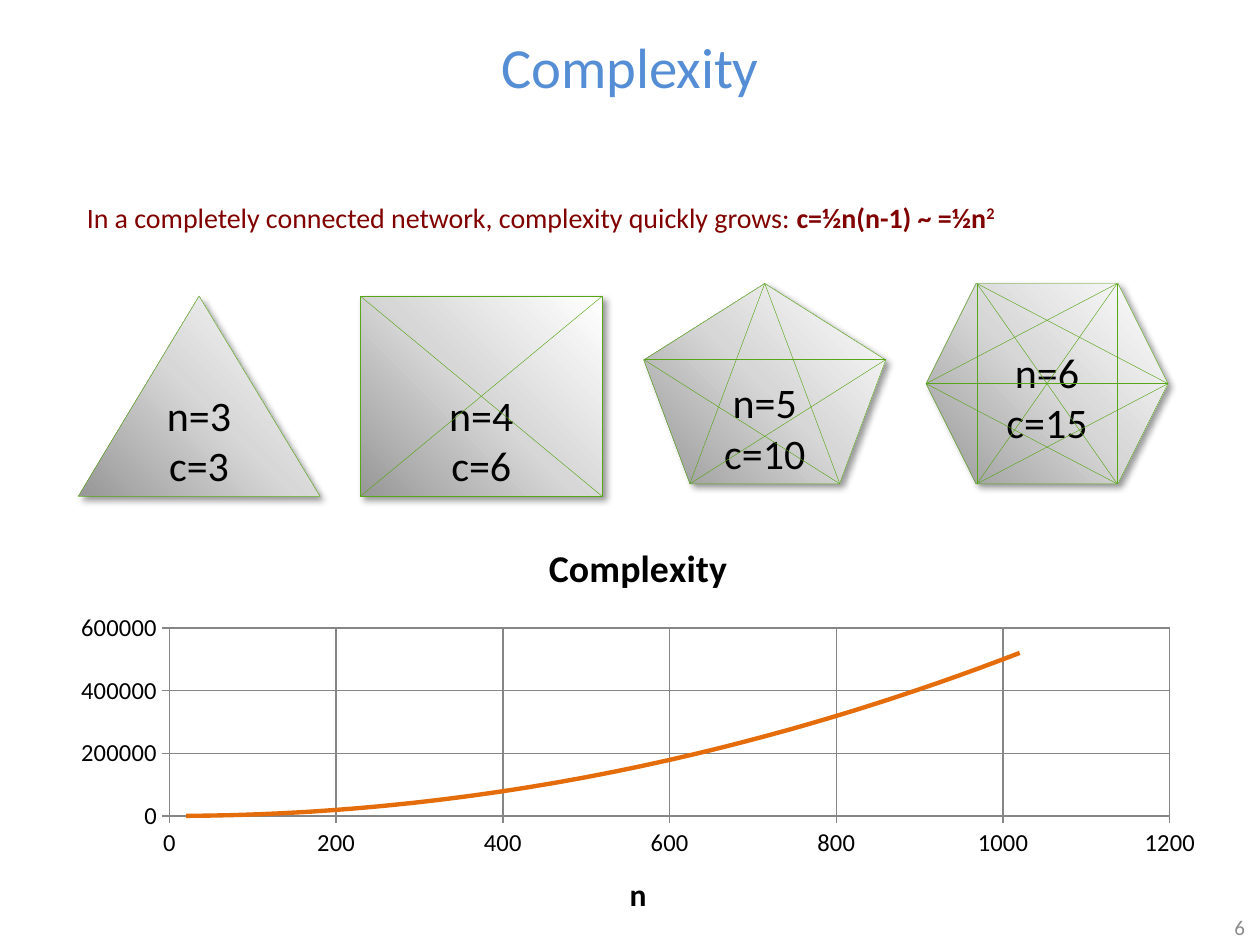
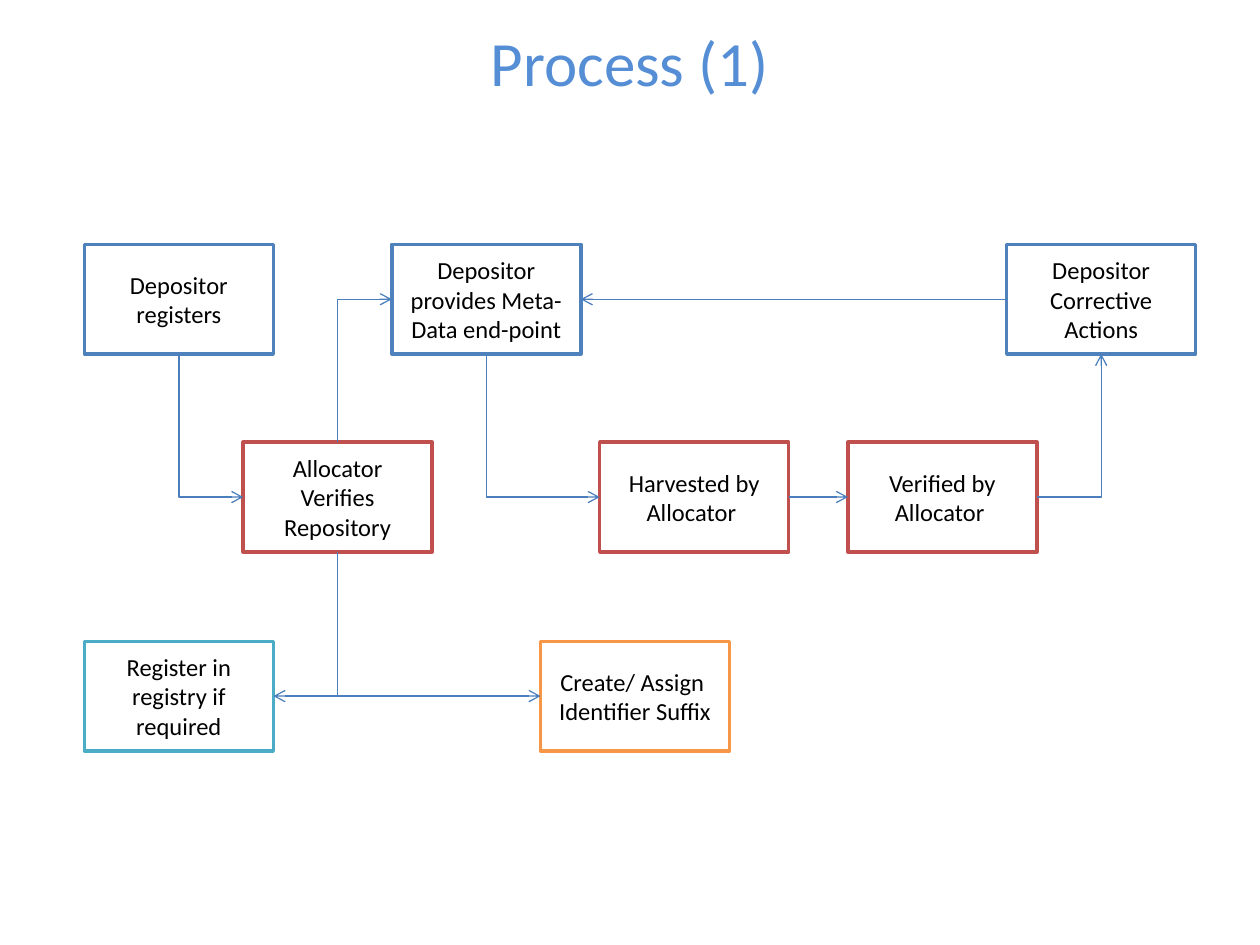
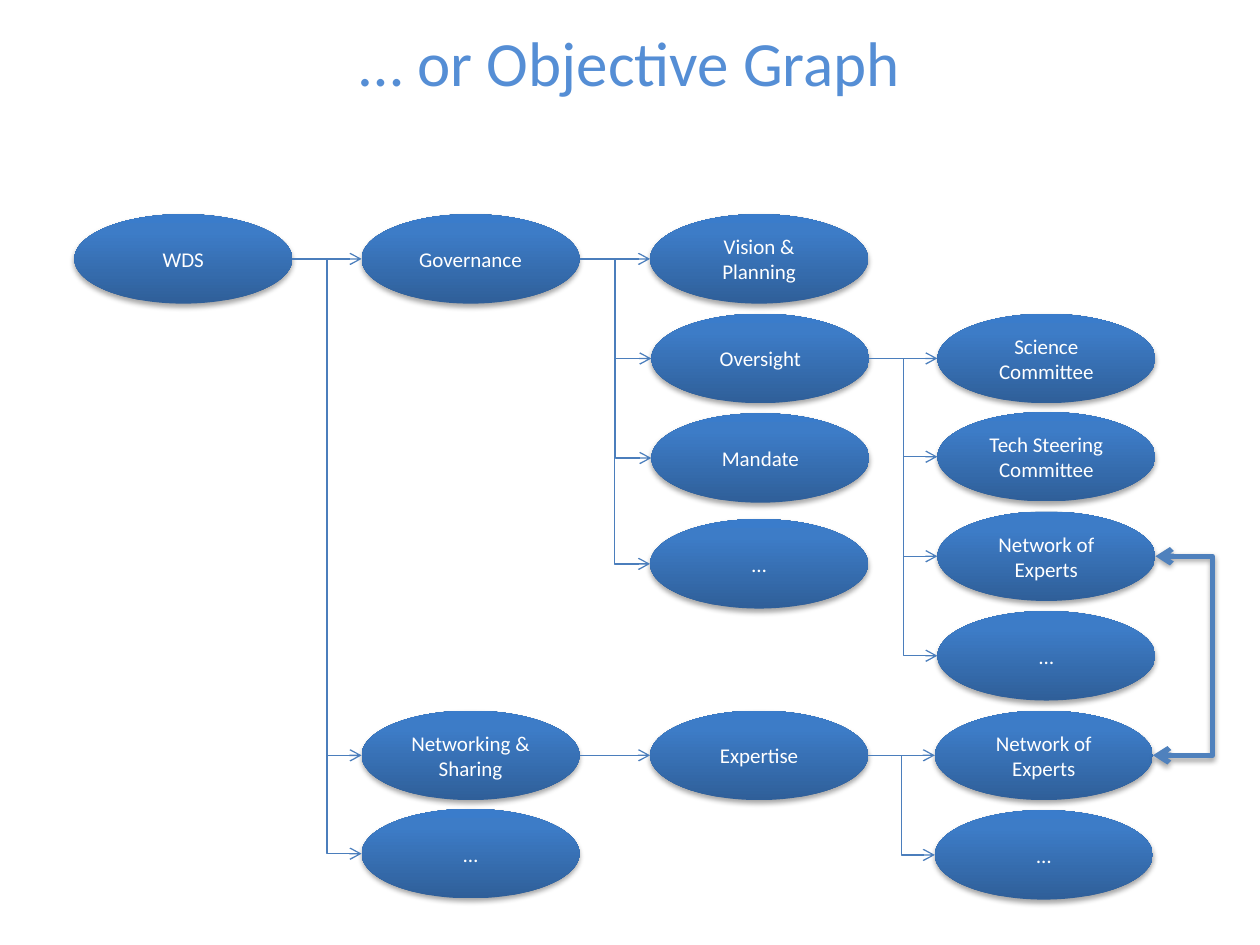
from dataclasses import dataclass
from itertools import combinations

from lxml.etree import SubElement
from pptx import Presentation
from pptx.chart.data import XyChartData
from pptx.dml.color import RGBColor
from pptx.enum.chart import XL_CHART_TYPE as ChartType, XL_MARKER_STYLE as Marker
from pptx.enum.chart import XL_TICK_MARK as Tick
from pptx.enum.shapes import MSO_CONNECTOR as Line, MSO_SHAPE as Shape
from pptx.enum.text import MSO_ANCHOR as Anchor, PP_ALIGN as Align
from pptx.oxml import parse_xml
from pptx.oxml.ns import nsdecls, qn
from pptx.util import Inches, Pt


@dataclass(frozen=True)
class Theme:
    font: str = "Calibri"
    black: str = "000000"
    white: str = "FFFFFF"
    title: str = "558ED5"
    number: str = "8C8C8C"
    claim: str = "800000"
    network: str = "58A618"
    arrow: str = "4B7EBC"
    blue: str = "4F81BD"
    red: str = "C0504D"
    orange: str = "F79646"
    teal: str = "4BACC6"
    trend: str = "E46C0A"
    grid: str = "868686"
    # Gradient: stops in percent, then the angle in degrees
    silver: tuple = (((0, "979797"), (50, "D7D7D7"), (100, "FFFFFF")), 315)
    ocean: tuple = (((0, "2F5F99"), (80, "3D7CC7"), (100, "3A7CCB")), 270)
    # Shadow: opacity in percent, blur and distance in points, angle in degrees
    deep_shadow: tuple = (40, 4, 3, 45)
    soft_shadow: tuple = (35, 3.1, 1.8, 90)
    title_size: float = 36
    small_title_size: float = 32.4
    polygon_size: float = 24
    chart_title_size: float = 21.6
    axis_title_size: float = 18
    claim_size: float = 16
    body_size: float = 14
    small_size: float = 12
    hairline: float = 0.25


theme = Theme()


def write(box, text, size, color=theme.black, align=Align.CENTER, anchor=Anchor.MIDDLE,
          wrap=True, bold=False):
    """Fill a shape with text, one paragraph for each line."""
    frame = box.text_frame
    frame.word_wrap = wrap
    frame.vertical_anchor = anchor
    for index, line in enumerate(text.split("\n")):
        para = frame.paragraphs[0] if index == 0 else frame.add_paragraph()
        para.alignment = align
        span = para.add_run()
        span.text = line
        span.font.name, span.font.size, span.font.bold = theme.font, Pt(size), bold
        span.font.color.rgb = RGBColor.from_string(color)


def link(page, start, end, kind=Line.ELBOW, color=theme.arrow, width=0.75,
         head=False, tail=True):
    """Draw a connector between two points given in inches."""
    line = page.shapes.add_connector(kind, *map(Inches, (*start, *end)))
    line.line.color.rgb = RGBColor.from_string(color)
    line.line.width = Pt(width)
    for tag, wanted in (("a:headEnd", head), ("a:tailEnd", tail)):
        if wanted:
            SubElement(line.line._ln, qn(tag), type="arrow")
    SubElement(line._element.spPr, qn("a:effectLst"))
    return line


deck = Presentation()
deck.slide_width, deck.slide_height = Inches(10), Inches(7.5)
dressed = []  # objects that get a gradient and a shadow at the end

# Pages with their titles
pages = []
for text, top, height, size in (
    ("Complexity", 0.29, 0.47, theme.small_title_size),
    ("Process (1)", -0.01, 1, theme.title_size),
    ("… or Objective Graph", -0.01, 1, theme.title_size),
):
    page = deck.slides.add_slide(deck.slide_layouts[6])
    box = page.shapes.add_textbox(0, Inches(top), Inches(10), Inches(height))
    write(box, text, size, color=theme.title)
    pages.append(page)
complexity, process, graph = pages

# Complexity: page number
box = complexity.shapes.add_textbox(Inches(9.56), Inches(7.23), Inches(0.42), Inches(0.25))
write(box, "6", theme.small_size, color=theme.number, align=Align.RIGHT)

# Complexity: polygons, with corners as fractions of their boxes
POLYGON_WIDTH, POLYGON_HEIGHT = 1.92, 1.59
polygons = (
    (Shape.ISOSCELES_TRIANGLE, 0.62, 2.35, "n=3\nc=3", ((0.5, 0), (1, 1), (0, 1))),
    (Shape.HEXAGON, 7.35, 2.25, "n=6\nc=15",
     ((0.21, 0), (0.79, 0), (1, 0.5), (0.79, 1), (0.21, 1), (0, 0.5))),
    (Shape.REGULAR_PENTAGON, 5.11, 2.25, "n=5\nc=10",
     ((0.5, 0), (1, 0.38), (0.81, 1), (0.19, 1), (0, 0.38))),
    (Shape.RECTANGLE, 2.86, 2.35, "n=4\nc=6", ((0, 0), (1, 0), (1, 1), (0, 1))),
)
for kind, left, top, text, corners in polygons:
    polygon = complexity.shapes.add_shape(
        kind, *map(Inches, (left, top, POLYGON_WIDTH, POLYGON_HEIGHT)))
    polygon.line.color.rgb = RGBColor.from_string(theme.network)
    polygon.line.width = Pt(theme.hairline)
    write(polygon, text, theme.polygon_size, anchor=Anchor.BOTTOM)
    dressed.append((polygon, theme.silver, theme.deep_shadow))

# Complexity: diagonals join every two corners that are not neighbours
for kind, left, top, text, corners in polygons:
    points = [(left + x * POLYGON_WIDTH, top + y * POLYGON_HEIGHT) for x, y in corners]
    for first, second in combinations(range(len(points)), 2):
        if second - first not in (1, len(points) - 1):
            link(complexity, points[first], points[second], kind=Line.STRAIGHT,
                 color=theme.network, width=theme.hairline, tail=False)

# Complexity: formula
box = complexity.shapes.add_textbox(Inches(0.59), Inches(1.54), Inches(8.85), Inches(0.37))
write(box, "In a completely connected network, complexity quickly grows: ",
      theme.claim_size, color=theme.claim, align=Align.LEFT, anchor=Anchor.TOP, wrap=False)
for text, raised in (("c=½n(n-1) ~ =½n", False), ("2", True)):
    span = box.text_frame.paragraphs[0].add_run()
    span.text = text
    span.font.name, span.font.size, span.font.bold = theme.font, Pt(theme.claim_size), True
    span.font.color.rgb = RGBColor.from_string(theme.claim)
    if raised:
        span.font._element.set("baseline", "30000")

# Complexity: chart
chart_data = XyChartData()
series_data = chart_data.add_series("Complexity")
nodes_and_links = [(0, 0)] * 5 + [
    (10, 0), (10, 0), (20, 0), (30, 0), (60, 0),
    (130, 10000), (260, 30000), (510, 130000), (1020, 520000)]
for node_count, link_count in nodes_and_links:
    series_data.add_data_point(node_count, link_count)
chart = complexity.shapes.add_chart(
    ChartType.XY_SCATTER, *map(Inches, (0.46, 4.12, 9.21, 3.38)), chart_data).chart
chart.has_legend = False
chart.font.name, chart.font.size = theme.font, Pt(theme.body_size)
chart.font.color.rgb = RGBColor.from_string(theme.black)
chart.has_title = True
write(chart.chart_title, "Complexity", theme.chart_title_size, bold=True)
chart.category_axis.has_title = True
write(chart.category_axis.axis_title, "n", theme.axis_title_size, bold=True)
for axis, maximum, step in ((chart.category_axis, 1200, 200),
                            (chart.value_axis, 600000, 200000)):
    axis.minimum_scale, axis.maximum_scale, axis.major_unit = 0, maximum, step
    axis.major_tick_mark, axis.minor_tick_mark = Tick.OUTSIDE, Tick.NONE
    axis.has_major_gridlines = True
    axis.tick_labels.font.size = Pt(theme.body_size)
    axis.tick_labels.number_format = "General"
    axis.tick_labels.number_format_is_linked = False
    for stroke in (axis.format.line, axis.major_gridlines.format.line):
        stroke.color.rgb = RGBColor.from_string(theme.grid)
        stroke.width = Pt(0.75)

# Complexity: the curve is a quadratic trend line, the points stay unseen
series = chart.plots[0].series[0]
series.format.line.fill.background()
series.marker.style = Marker.NONE
series.smooth = False
series._element.find(qn("c:xVal")).addprevious(parse_xml(
    f'<c:trendline {nsdecls("c", "a")}><c:spPr><a:ln w="{Pt(2.5)}"><a:solidFill>'
    f'<a:srgbClr val="{theme.trend}"/></a:solidFill></a:ln></c:spPr>'
    '<c:trendlineType val="poly"/><c:order val="2"/>'
    '<c:dispRSqr val="0"/><c:dispEq val="0"/></c:trendline>'))

# Process: steps
STEP_WIDTH, STEP_HEIGHT = 1.5, 0.87
TOP_ROW, MIDDLE_ROW, BOTTOM_ROW = 1.94, 3.51, 5.09
steps = {
    "provide": ("Depositor provides Meta-Data end-point", 3.11, TOP_ROW, theme.blue),
    "register": ("Depositor registers", 0.67, TOP_ROW, theme.blue),
    "harvest": ("Harvested by\nAllocator ", 4.76, MIDDLE_ROW, theme.red),
    "check": ("Allocator Verifies Repository", 1.93, MIDDLE_ROW, theme.red),
    "verify": ("Verified by\nAllocator ", 6.73, MIDDLE_ROW, theme.red),
    "correct": ("Depositor Corrective Actions", 7.99, TOP_ROW, theme.blue),
    "suffix": ("Create/ Assign \nIdentifier Suffix", 4.29, BOTTOM_ROW, theme.orange),
    "catalogue": ("Register in registry if required", 0.67, BOTTOM_ROW, theme.teal),
}
sides = {}
for name, (text, left, top, color) in steps.items():
    box = process.shapes.add_shape(
        Shape.RECTANGLE, *map(Inches, (left, top, STEP_WIDTH, STEP_HEIGHT)))
    box.shadow.inherit = False
    box.fill.solid()
    box.fill.fore_color.rgb = RGBColor.from_string(theme.white)
    box.line.color.rgb = RGBColor.from_string(color)
    box.line.width = Pt(2)
    write(box, text, theme.body_size)
    center, middle = left + STEP_WIDTH / 2, top + STEP_HEIGHT / 2
    sides[name] = {"top": (center, top), "left": (left, middle),
                   "bottom": (center, top + STEP_HEIGHT),
                   "right": (left + STEP_WIDTH, middle)}

# Process: arrows, turning once where they leave or enter a top or bottom side
for source, source_side, target, target_side in (
    ("register", "bottom", "check", "left"),
    ("check", "top", "provide", "left"),
    ("verify", "right", "correct", "bottom"),
    ("correct", "left", "provide", "right"),
    ("provide", "bottom", "harvest", "left"),
    ("harvest", "right", "verify", "left"),
    ("check", "bottom", "suffix", "left"),
    ("check", "bottom", "catalogue", "right"),
):
    start, end = sides[source][source_side], sides[target][target_side]
    arrow = link(process, start, end)
    leaves_upright = source_side in ("top", "bottom")
    if leaves_upright or target_side in ("top", "bottom"):
        arrow._element.spPr.find(qn("a:prstGeom")).set("prst", "bentConnector2")
    if leaves_upright:
        # A vertical first leg needs a quarter turn about the centre
        run, rise = abs(end[0] - start[0]), abs(end[1] - start[1])
        arrow.left = Inches((start[0] + end[0] - rise) / 2)
        arrow.top = Inches((start[1] + end[1] - run) / 2)
        arrow.width, arrow.height = Inches(rise), Inches(run)
        rightward, upward = end[0] > start[0], end[1] < start[1]
        xfrm = arrow._element.spPr.find(qn("a:xfrm"))
        xfrm.set("rot", str((270 if rightward and not upward else 90) * 60000))
        xfrm.set("flipH", str(int(rightward)))
        xfrm.set("flipV", str(int(upward)))

# Objective graph: nodes
NODE_WIDTH, NODE_HEIGHT = 1.73, 0.71
nodes = {
    "wds": ("WDS", 0.59, 1.7),
    "governance": ("Governance", 2.87, 1.7),
    "vision": ("Vision &\nPlanning", 5.16, 1.7),
    "networking": ("Networking & Sharing", 2.87, 5.64),
    "expertise": ("Expertise", 5.16, 5.64),
    "oversight": ("Oversight", 5.17, 2.49),
    "mandate": ("Mandate", 5.17, 3.28),
    "more governance": ("…", 5.16, 4.12),
    "science": ("Science Committee", 7.44, 2.49),
    "steering": ("Tech Steering\nCommittee", 7.44, 3.27),
    "overseen experts": ("Network of Experts", 7.44, 4.06),
    "more oversight": ("…", 7.44, 4.85),
    "more goals": ("…", 2.87, 6.42),
    "experts": ("Network of Experts", 7.42, 5.64),
    "more expertise": ("…", 7.42, 6.43),
}
entries, exits = {}, {}
for name, (text, left, top) in nodes.items():
    oval = graph.shapes.add_shape(
        Shape.OVAL, *map(Inches, (left, top, NODE_WIDTH, NODE_HEIGHT)))
    oval.line.fill.background()
    write(oval, text, theme.small_size, color=theme.white)
    dressed.append((oval, theme.ocean, theme.soft_shadow))
    entries[name] = (left, top + NODE_HEIGHT / 2)
    exits[name] = (left + NODE_WIDTH, top + NODE_HEIGHT / 2)

# Objective graph: arrows from parent to children
children = {
    "wds": ("governance", "networking", "more goals"),
    "governance": ("vision", "oversight", "mandate", "more governance"),
    "oversight": ("science", "steering", "overseen experts", "more oversight"),
    "networking": ("expertise",),
    "expertise": ("experts", "more expertise"),
}
for parent, names in children.items():
    for name in names:
        link(graph, exits[parent], entries[name])

# Objective graph: thick link between the two expert networks, bending out to the right
bridge = link(graph, exits["experts"], exits["overseen experts"],
              color=theme.blue, width=3, head=True)
SubElement(bridge._element.spPr.find(qn("a:prstGeom")).find(qn("a:avLst")),
           qn("a:gd"), name="adj1", fmla="val 2350000")
dressed.append((bridge, None, theme.soft_shadow))

# Gradients and shadows
for item, gradient, (opacity, blur, distance, direction) in dressed:
    properties = item._element.spPr
    if gradient:
        stops, angle = gradient
        stop_xml = "".join(f'<a:gs pos="{position * 1000}"><a:srgbClr val="{color}"/></a:gs>'
                           for position, color in stops)
        item.fill.background()
        properties.replace(properties.find(qn("a:noFill")), parse_xml(
            f'<a:gradFill {nsdecls("a")} rotWithShape="1"><a:gsLst>{stop_xml}</a:gsLst>'
            f'<a:lin ang="{angle * 60000}" scaled="0"/></a:gradFill>'))
        item.shadow.inherit = False
    properties.find(qn("a:effectLst")).append(parse_xml(
        f'<a:outerShdw {nsdecls("a")} blurRad="{Pt(blur)}" dist="{Pt(distance)}" '
        f'dir="{direction * 60000}" algn="tl" rotWithShape="0">'
        f'<a:srgbClr val="{theme.black}"><a:alpha val="{opacity * 1000}"/></a:srgbClr>'
        '</a:outerShdw>'))

deck.save("out.pptx")
